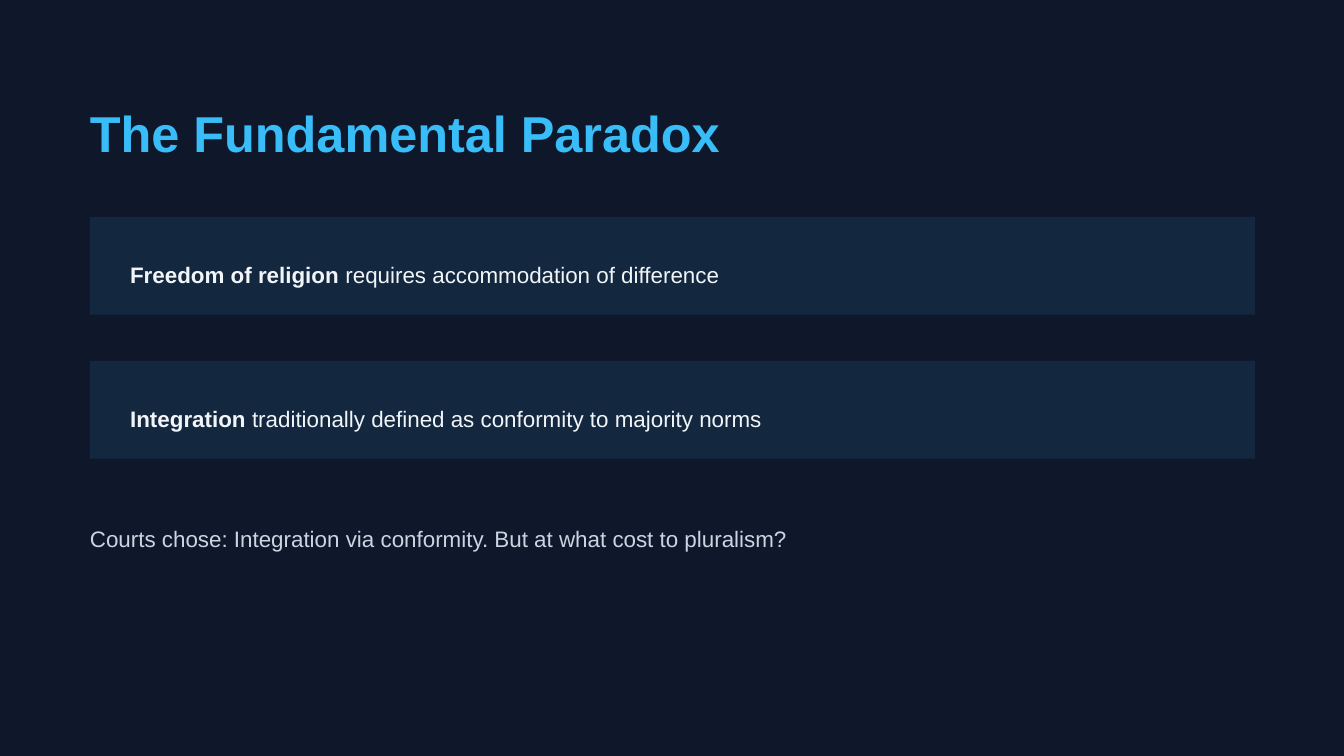
from lxml.etree import SubElement
from pptx import Presentation
from pptx.dml.color import RGBColor
from pptx.enum.shapes import MSO_SHAPE
from pptx.oxml.ns import qn
from pptx.util import Cm, Pt


def paint(color_format, hex_color):
    color_format.rgb = RGBColor.from_string(hex_color)


def add_line(left, top, width, height, spacing, size, color, runs):
    frame = slide.shapes.add_textbox(Cm(left), Cm(top), Cm(width), Cm(height)).text_frame
    frame_format = {"margin_left": 0, "margin_top": 0, "margin_right": 0,
                    "margin_bottom": 0, "word_wrap": True}
    for attribute, value in frame_format.items():
        setattr(frame, attribute, value)
    paragraph = frame.paragraphs[0]
    paragraph.line_spacing = spacing
    for words, bold in runs:
        run = paragraph.add_run()
        run.text = words
        run_format = {"name": "Arial", "size": Pt(size), "bold": bold}
        for attribute, value in run_format.items():
            setattr(run.font, attribute, value)
        paint(run.font.color, color)


deck = Presentation()
deck.slide_width, deck.slide_height = Cm(25.4), Cm(14.29)
slide = deck.slides.add_slide(deck.slide_layouts[6])
slide.background.fill.solid()
paint(slide.background.fill.fore_color, "0F172A")

accent = "38BDF8"
margin = 1.7
card_top, card_step = 4.1, 2.72
principles = [
    ("Freedom of religion", " requires accommodation of difference"),
    ("Integration", " traditionally defined as conformity to majority norms"),
]

add_line(margin, 1.7, 22.45, 1.14, 1.2, 27, accent, [("The Fundamental Paradox", True)])

for index, (principle, meaning) in enumerate(principles):
    top = card_top + index * card_step
    card = slide.shapes.add_shape(MSO_SHAPE.RECTANGLE, Cm(margin), Cm(top), Cm(22.02), Cm(1.85))
    card.shadow.inherit = False
    card.line.fill.background()
    card.fill.solid()
    paint(card.fill.fore_color, accent)
    tint = card.fill._xPr.find(qn("a:solidFill"))[0]
    SubElement(tint, qn("a:alpha"), val="10000")
    add_line(margin + 0.76, top + 0.64, 21.03, 0.58, 1.4, 12, "F1F5F9",
             [(principle, True), (meaning, False)])

add_line(margin, 9.73, 22.45, 0.58, 1.4, 12, "CBD5E1",
         [("Courts chose: Integration via conformity. But at what cost to pluralism?", False)])

deck.save("out.pptx")
